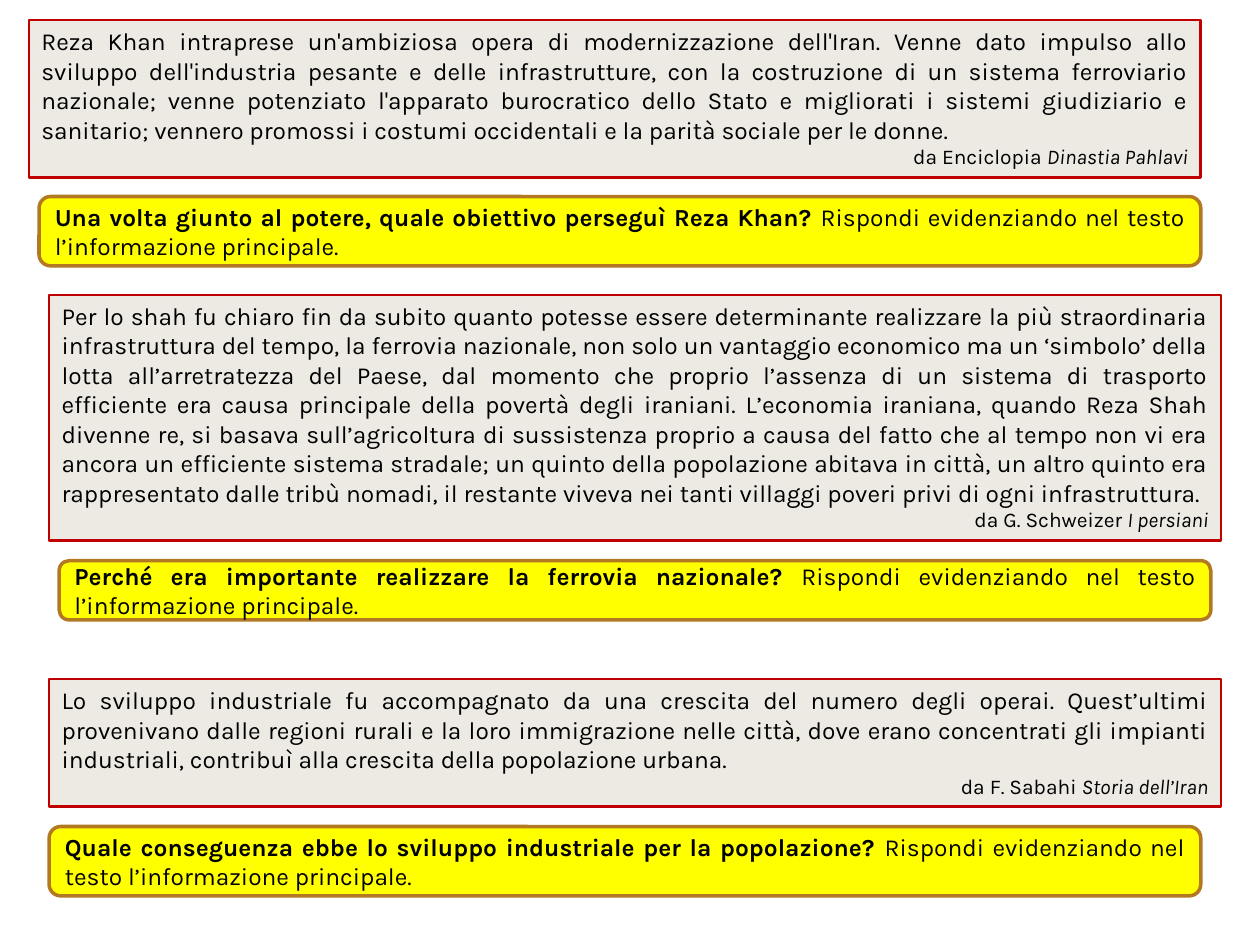
from pptx import Presentation
from pptx.dml.color import RGBColor
from pptx.enum.shapes import MSO_SHAPE
from pptx.enum.text import MSO_ANCHOR, MSO_AUTO_SIZE, PP_ALIGN
from pptx.util import Inches, Pt

FONT = "Karla"
INSTRUCTION = "Rispondi evidenziando nel testo l’informazione principale."
PASSAGE_STYLE = {"fill": "ECEAE3", "line": "C00000", "width": 1.5}
QUESTION_STYLE = {"fill": "FFFF00", "line": "B27822", "width": 2}

SECTIONS = [
    {
        "passage_box": (0.23, 0.16, 9.3, 1.25),
        "passage": "Reza Khan intraprese un'ambiziosa opera di modernizzazione "
                   "dell'Iran. Venne dato impulso allo sviluppo dell'industria "
                   "pesante e delle infrastrutture, con la costruzione di un "
                   "sistema ferroviario nazionale; venne potenziato l'apparato "
                   "burocratico dello Stato e migliorati i sistemi giudiziario "
                   "e sanitario; vennero promossi i costumi occidentali e la "
                   "parità sociale per le donne.",
        "author": "Enciclopia",
        "work": "Dinastia Pahlavi",
        "question_box": (0.31, 1.56, 9.22, 0.55),
        "question": "Una volta giunto al potere, quale obiettivo perseguì Reza Khan?",
    },
    {
        "passage_box": (0.39, 2.34, 9.3, 1.95),
        "passage": "Per lo shah fu chiaro fin da subito quanto potesse essere "
                   "determinante realizzare la più straordinaria infrastruttura "
                   "del tempo, la ferrovia nazionale, non solo un vantaggio "
                   "economico ma un ‘simbolo’ della lotta all’arretratezza del "
                   "Paese, dal momento che proprio l’assenza di un sistema di "
                   "trasporto efficiente era causa principale della povertà "
                   "degli iraniani. L’economia iraniana, quando Reza Shah "
                   "divenne re, si basava sull’agricoltura di sussistenza "
                   "proprio a causa del fatto che al tempo non vi era ancora un "
                   "efficiente sistema stradale; un quinto della popolazione "
                   "abitava in città, un altro quinto era rappresentato dalle "
                   "tribù nomadi, il restante viveva nei tanti villaggi poveri "
                   "privi di ogni infrastruttura.",
        "author": "G. Schweizer",
        "work": "I persiani",
        "question_box": (0.47, 4.45, 9.14, 0.47),
        "question": "Perché era importante realizzare la ferrovia nazionale?",
    },
    {
        "passage_box": (0.39, 5.39, 9.3, 1.01),
        "passage": "Lo sviluppo industriale fu accompagnato da una crescita del "
                   "numero degli operai. Quest’ultimi provenivano dalle regioni "
                   "rurali e la loro immigrazione nelle città, dove erano "
                   "concentrati gli impianti industriali, contribuì alla "
                   "crescita della popolazione urbana.",
        "author": "F. Sabahi",
        "work": "Storia dell’Iran",
        "question_box": (0.39, 6.56, 9.14, 0.55),
        "question": "Quale conseguenza ebbe lo sviluppo industriale per la popolazione?",
    },
]


def color(value):
    return RGBColor.from_string(value)


def add_panel(page, kind, box, style):
    panel = page.shapes.add_shape(kind, *(Inches(length) for length in box))
    panel.shadow.inherit = False
    panel.fill.solid()
    panel.fill.fore_color.rgb = color(style["fill"])
    panel.line.color.rgb = color(style["line"])
    panel.line.width = Pt(style["width"])
    panel.text_frame.word_wrap = True
    return panel.text_frame


def write_spans(para, alignment, spans):
    para.alignment = alignment
    for text, changes in spans:
        span = para.add_run()
        span.text = text
        span.font.color.rgb = color("000000")
        for name, value in ({"name": FONT, "size": Pt(14)} | changes).items():
            setattr(span.font, name, value)


def add_passage(page, box, passage, author, work):
    frame = add_panel(page, MSO_SHAPE.RECTANGLE, box, PASSAGE_STYLE)
    frame.vertical_anchor = MSO_ANCHOR.TOP
    frame.auto_size = MSO_AUTO_SIZE.SHAPE_TO_FIT_TEXT
    write_spans(frame.paragraphs[0], PP_ALIGN.JUSTIFY, [(passage, {})])
    write_spans(frame.add_paragraph(), PP_ALIGN.RIGHT, [
        (f"da {author} ", {"size": Pt(12)}),
        (work, {"size": Pt(12), "italic": True}),
    ])


def add_question(page, box, question):
    frame = add_panel(page, MSO_SHAPE.ROUNDED_RECTANGLE, box, QUESTION_STYLE)
    frame.vertical_anchor = MSO_ANCHOR.MIDDLE
    write_spans(frame.paragraphs[0], PP_ALIGN.JUSTIFY, [
        (f"{question} ", {"bold": True}),
        (INSTRUCTION, {"bold": False}),
    ])


def main():
    deck = Presentation()
    deck.slide_width, deck.slide_height = Inches(10), Inches(7.5)
    page = deck.slides.add_slide(deck.slide_layouts[6])
    for section in SECTIONS:
        add_passage(page, section["passage_box"], section["passage"],
                    section["author"], section["work"])
        add_question(page, section["question_box"], section["question"])
    deck.save("out.pptx")


if __name__ == "__main__":
    main()
